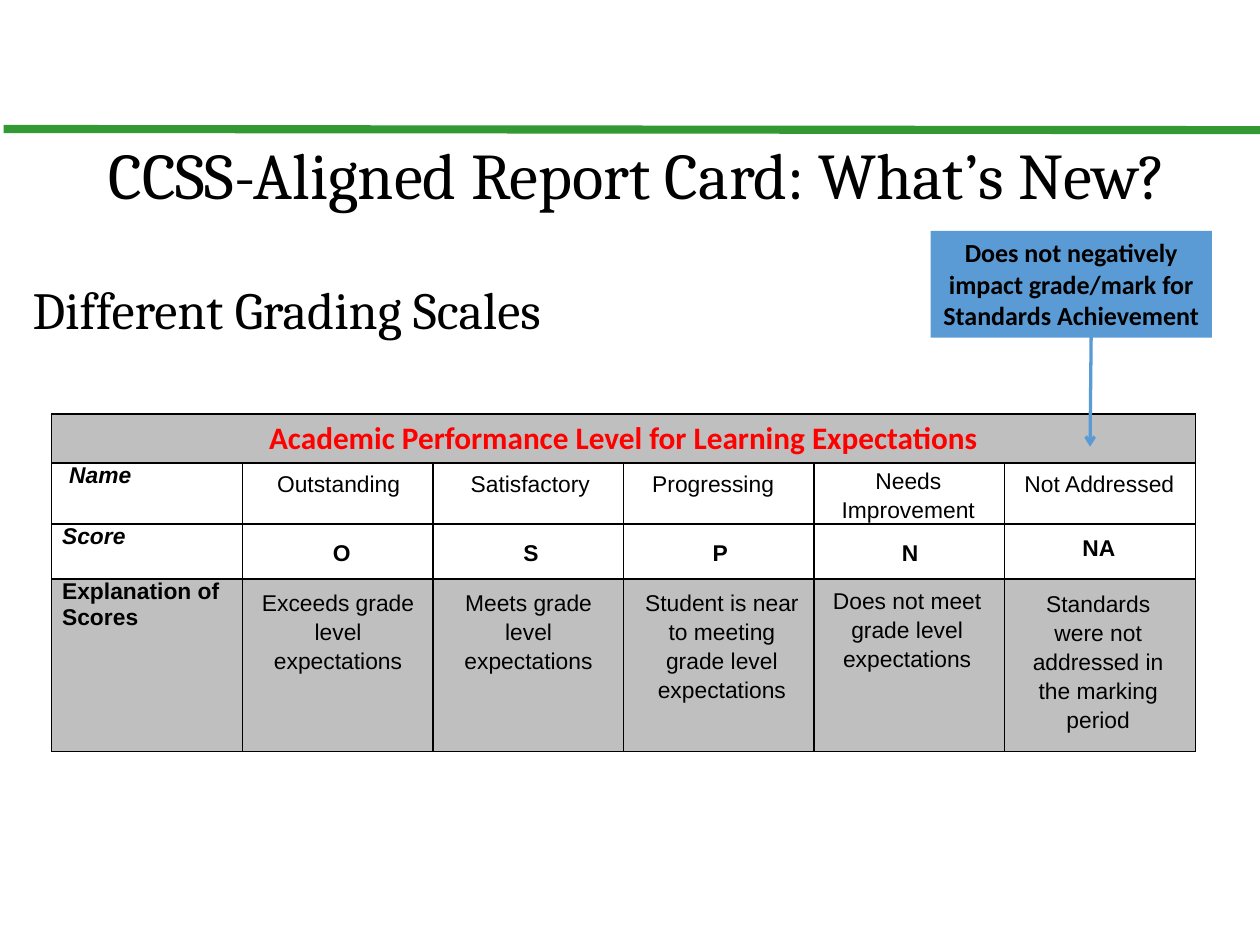
from typing import NamedTuple, Optional

import pptx
import pptx.dml.color
import pptx.enum.shapes
import pptx.enum.text
import pptx.oxml
import pptx.oxml.ns
import pptx.util
from pptx.util import Inches

COLORS = {
    "text": "000000",
    "rule": "339933",
    "heading": "FF0000",
    "shade": "BFBFBF",
    "callout": "5B9BD5",
}
CENTER = pptx.enum.text.PP_ALIGN.CENTER
LEFT = pptx.enum.text.PP_ALIGN.LEFT
TOP = pptx.enum.text.MSO_ANCHOR.TOP
MIDDLE = pptx.enum.text.MSO_ANCHOR.MIDDLE
COLUMN_COUNT = 6
COLUMN_WIDTH = 9.76 / COLUMN_COUNT
ROW_HEIGHTS = (0.42, 0.52, 0.47, 1.47)


class Label(NamedTuple):
    text: str
    left: float
    top: float
    width: float
    height: float
    bold: bool = False
    exact_points: Optional[float] = None


class RowHeading(NamedTuple):
    text: str
    indent: float
    italic: bool


ROW_HEADINGS = (
    RowHeading("Name", 0.15, True),
    RowHeading("Score", 0.09, True),
    RowHeading("Explanation of Scores", 0.09, False),
)

LABELS = (
    Label("Outstanding", 2.11, 4.06, 1.56, 0.25, exact_points=9.5),
    Label("Satisfactory", 3.72, 4.06, 1.61, 0.25, exact_points=9.5),
    Label("Progressing", 5.3, 3.94, 1.57, 0.33),
    Label("Needs Improvement", 6.95, 3.92, 1.6, 0.57),
    Label("Not Addressed", 8.58, 3.94, 1.6, 0.34),
    Label("O", 2.15, 4.53, 1.53, 0.34, bold=True),
    Label("S", 3.74, 4.53, 1.58, 0.34, bold=True),
    Label("P", 5.39, 4.53, 1.51, 0.34, bold=True),
    Label("N", 7.01, 4.53, 1.51, 0.34, bold=True),
    Label("NA", 8.62, 4.49, 1.51, 0.34, bold=True),
    Label("Exceeds grade level expectations", 2.1, 4.96, 1.57, 0.81),
    Label("Meets grade level expectations", 3.74, 4.96, 1.54, 0.81),
    Label("Student is near to meeting grade level expectations", 5.38, 4.96, 1.56, 1.04),
    Label("Does not meet grade level expectations", 6.97, 4.94, 1.54, 0.81),
    Label("Standards were not addressed in the marking period", 8.6, 4.97, 1.54, 1.28),
)


def rgb(name: str) -> pptx.dml.color.RGBColor:
    return pptx.dml.color.RGBColor.from_string(COLORS[name])


def write(text_frame, text: str, font_name: str, size: float, bold: bool = False,
          italic: bool = False, color: str = "text", alignment=CENTER):
    """Fill a text frame with one formatted paragraph and return it."""
    text_frame.text = text
    text_frame.word_wrap = True
    paragraph = text_frame.paragraphs[0]
    paragraph.alignment = alignment
    for run in paragraph.runs:
        run.font.name = font_name
        run.font.size = pptx.util.Pt(size)
        run.font.bold = bold
        run.font.italic = italic
        run.font.color.rgb = rgb(color)
    return paragraph


def add_line(slide, start: tuple, end: tuple, color: str, width: float, arrow: bool = False) -> None:
    line = slide.shapes.add_connector(
        pptx.enum.shapes.MSO_CONNECTOR.STRAIGHT, *map(Inches, start + end))
    line.line.color.rgb = rgb(color)
    line.line.width = pptx.util.Pt(width)
    if arrow:
        tail = pptx.oxml.ns.qn("a:tailEnd")
        line.line._get_or_add_ln().makeelement(tail)
        line.line._get_or_add_ln().append(
            line.line._get_or_add_ln().makeelement(tail, {"type": "arrow"}))
    properties = line._element.spPr
    properties.append(properties.makeelement(pptx.oxml.ns.qn("a:effectLst")))


def add_label(slide, label: Label) -> None:
    box = slide.shapes.add_textbox(
        *map(Inches, (label.left, label.top, label.width, label.height)))
    paragraph = write(box.text_frame, label.text, "Arial", 14, label.bold)
    if label.exact_points:
        paragraph.line_spacing = pptx.util.Pt(label.exact_points)
    else:
        paragraph.line_spacing = 1.06


def add_borders(cell) -> None:
    properties = cell._tc.get_or_add_tcPr()
    for index, side in enumerate(("lnL", "lnR", "lnT", "lnB")):
        properties.insert(index, pptx.oxml.parse_xml(
            f'<a:{side} {pptx.oxml.ns.nsdecls("a")} w="12700"><a:solidFill>'
            f'<a:srgbClr val="{COLORS["text"]}"/></a:solidFill></a:{side}>'))


def add_scale_table(slide) -> None:
    frame = slide.shapes.add_table(
        len(ROW_HEIGHTS), COLUMN_COUNT,
        *map(Inches, (0.44, 3.53, COLUMN_WIDTH * COLUMN_COUNT, sum(ROW_HEIGHTS))))
    table = frame.table
    table.first_row = table.horz_banding = False
    for column in table.columns:
        column.width = Inches(COLUMN_WIDTH)
    for row_index, height in enumerate(ROW_HEIGHTS):
        table.rows[row_index].height = Inches(height)
        for cell in table.rows[row_index].cells:
            if row_index in (0, len(ROW_HEIGHTS) - 1):
                cell.fill.solid()
                cell.fill.fore_color.rgb = rgb("shade")
            else:
                cell.fill.background()
            add_borders(cell)

    header = table.cell(0, 0)
    header.merge(table.cell(0, COLUMN_COUNT - 1))
    header.vertical_anchor = MIDDLE
    write(header.text_frame, "Academic Performance Level for Learning Expectations",
          "Calibri", 19.2, bold=True, color="heading")
    for row_index, heading in enumerate(ROW_HEADINGS, start=1):
        cell = table.cell(row_index, 0)
        cell.margin_right = cell.margin_top = cell.margin_bottom = 0
        cell.margin_left = Inches(heading.indent)
        write(cell.text_frame, heading.text, "Arial", 14, bold=True,
              italic=heading.italic, alignment=LEFT)


def add_callout(slide) -> None:
    callout = slide.shapes.add_shape(
        pptx.enum.shapes.MSO_SHAPE.RECTANGLE, *map(Inches, (7.94, 1.97, 2.4, 0.91)))
    callout.shadow.inherit = False
    callout.fill.solid()
    callout.fill.fore_color.rgb = rgb("callout")
    callout.line.fill.background()
    callout.text_frame.vertical_anchor = TOP
    write(callout.text_frame,
          "Does not negatively impact grade/mark for Standards Achievement",
          "Calibri", 16, bold=True)
    add_line(slide, (9.31, 2.83), (9.3, 3.81), "callout", 2, arrow=True)


def main() -> None:
    presentation = pptx.Presentation()
    presentation.slide_width = Inches(10.75)
    presentation.slide_height = Inches(8)
    slide = presentation.slides.add_slide(presentation.slide_layouts[5])

    add_line(slide, (0.03, 1.1), (10.75, 1.11), "rule", 5)

    title = slide.shapes.title
    title.left, title.top, title.width, title.height = map(Inches, (0, 1.17, 10.88, 1.37))
    title.text_frame.vertical_anchor = TOP
    title.text_frame.auto_size = pptx.enum.text.MSO_AUTO_SIZE.NONE
    write(title.text_frame, "CCSS-Aligned Report Card: What’s New?",
          "Cambria", 40).line_spacing = 0.9

    subtitle = slide.shapes.add_textbox(*map(Inches, (0.18, 2.32, 6.67, 0.64)))
    write(subtitle.text_frame, "Different Grading Scales", "Cambria", 32, alignment=LEFT)

    add_scale_table(slide)
    for label in LABELS:
        add_label(slide, label)
    add_callout(slide)
    presentation.save("out.pptx")


if __name__ == "__main__":
    main()
